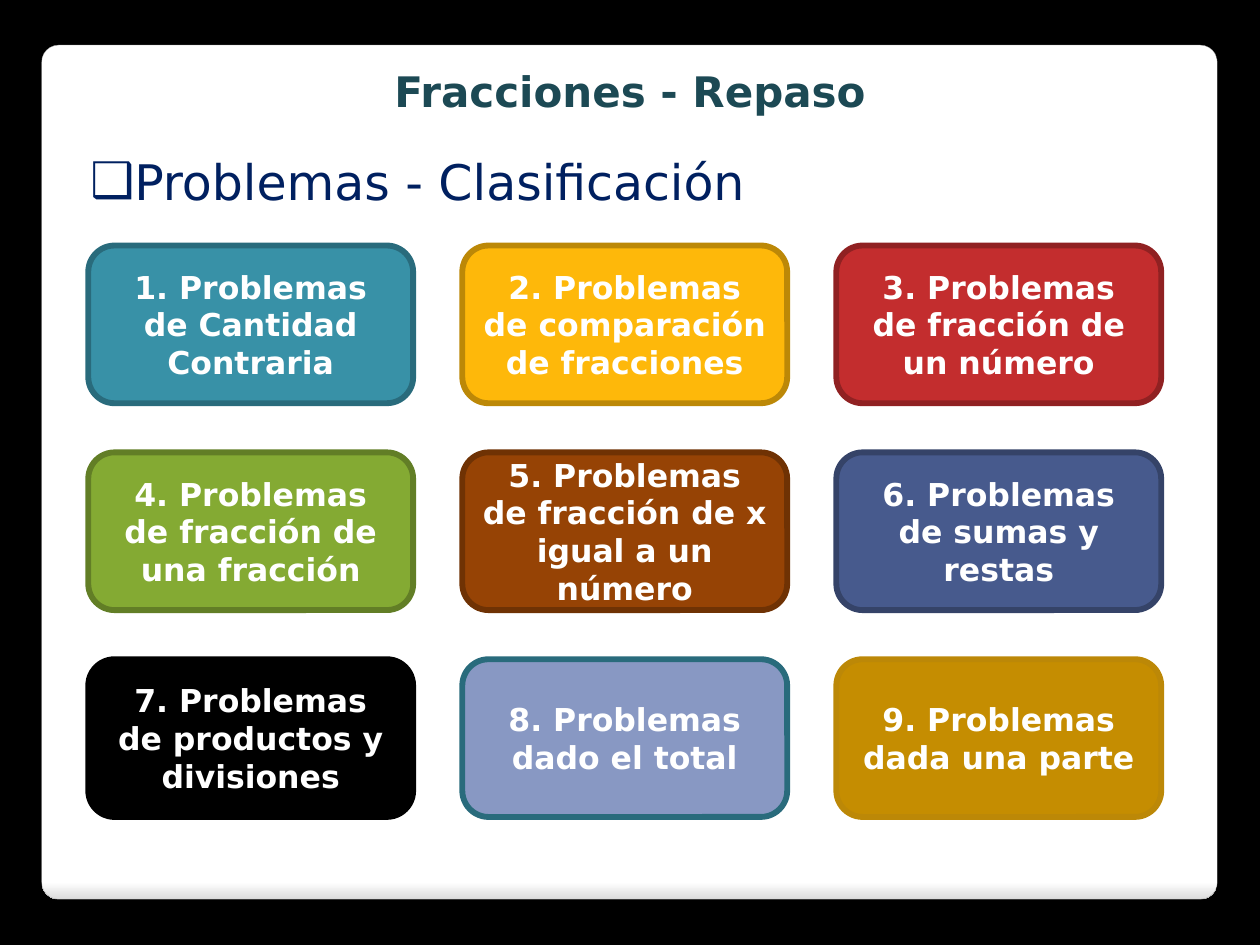
from lxml.etree import SubElement
from pptx import Presentation
from pptx.dml.color import RGBColor
from pptx.enum.shapes import MSO_SHAPE
from pptx.enum.text import MSO_ANCHOR, MSO_AUTO_SIZE, PP_ALIGN
from pptx.oxml.ns import qn
from pptx.util import Cm, Pt

FONT = "DejaVu Sans"


def color(text):
    return RGBColor.from_string(text)


def write(shape, text, size, tint, bold, align):
    frame = shape.text_frame
    form = {"word_wrap": True, "auto_size": MSO_AUTO_SIZE.NONE,
            "vertical_anchor": MSO_ANCHOR.MIDDLE}
    for name, value in form.items():
        setattr(frame, name, value)
    frame.text = text
    para = frame.paragraphs[0]
    para.alignment = align
    para.space_before = Pt(0)
    font = para.runs[0].font
    for name, value in {"name": FONT, "size": Pt(size), "bold": bold}.items():
        setattr(font, name, value)
    font.color.rgb = color(tint)
    return para


deck = Presentation()
deck.slide_width, deck.slide_height = Cm(25.4), Cm(19.05)
slide = deck.slides.add_slide(deck.slide_layouts[1])
slide.background.fill.solid()
slide.background.fill.fore_color.rgb = color("000000")
shapes = slide.shapes
title, body = shapes.title, slide.placeholders[1]

# White panel, sent behind the placeholders
panel = shapes.add_shape(MSO_SHAPE.ROUNDED_RECTANGLE,
                         Cm(0.84), Cm(0.91), Cm(23.7), Cm(17.22))
panel.adjustments[0] = 0.02
panel.shadow.inherit = False
panel.fill.gradient()
panel.fill.gradient_angle = 270
for stop, (place, tint) in zip(panel.fill.gradient_stops,
                               [(0.98, "FFFFFF"), (1, "DADADA")]):
    stop.position = place
    stop.color.rgb = color(tint)
panel.line.color.rgb = color("A4A4A4")
panel.line.width = Pt(0.16)
title.element.addprevious(panel.element)

# Title and bulleted heading
for holder, box in [(title, (0.99, 1.19, 23.42, 1.27)),
                    (body, (1.57, 2.92, 21.03, 1.45))]:
    for name, value in zip(("left", "top", "width", "height"), box):
        setattr(holder, name, Cm(value))
write(title, "Fracciones - Repaso", 24, "1C4954", True, PP_ALIGN.CENTER)
head = write(body, "Problemas - Clasificación", 28, "002060", False,
             PP_ALIGN.LEFT)
props = head._p.get_or_add_pPr()
props.set("marL", "0")
props.set("indent", "0")
SubElement(props, qn("a:buFont"), typeface=FONT)
SubElement(props, qn("a:buChar"), char="❑")

# Grid of problem types: text, fill, line
cards = [
    ("de Cantidad Contraria", "3891A7", "296B7C"),
    ("de comparación de fracciones", "FEB80A", "BC8807"),
    ("de fracción de un número", "C32D2E", "902122"),
    ("de fracción de una fracción", "84AA33", "627E26"),
    ("de fracción de x igual a un número", "964305", "6F3204"),
    ("de sumas y restas", "475A8D", "354368"),
    ("de productos y divisiones", "000000", "000000"),
    ("dado el total", "8898C3", "296B7C"),
    ("dada una parte", "C58D01", "BC8807"),
]
for num, (text, fill, edge) in enumerate(cards):
    row, col = divmod(num, 3)
    card = shapes.add_shape(MSO_SHAPE.ROUNDED_RECTANGLE,
                            Cm(1.78 + 7.54 * col), Cm(4.95 + 4.17 * row),
                            Cm(6.55), Cm(3.18))
    card.shadow.inherit = False
    card.fill.solid()
    card.fill.fore_color.rgb = color(fill)
    card.line.color.rgb = color(edge)
    card.line.width = Pt(3.35)
    write(card, f"{num + 1}. Problemas {text}", 18, "FFFFFF", True,
          PP_ALIGN.CENTER)

deck.save("out.pptx")
